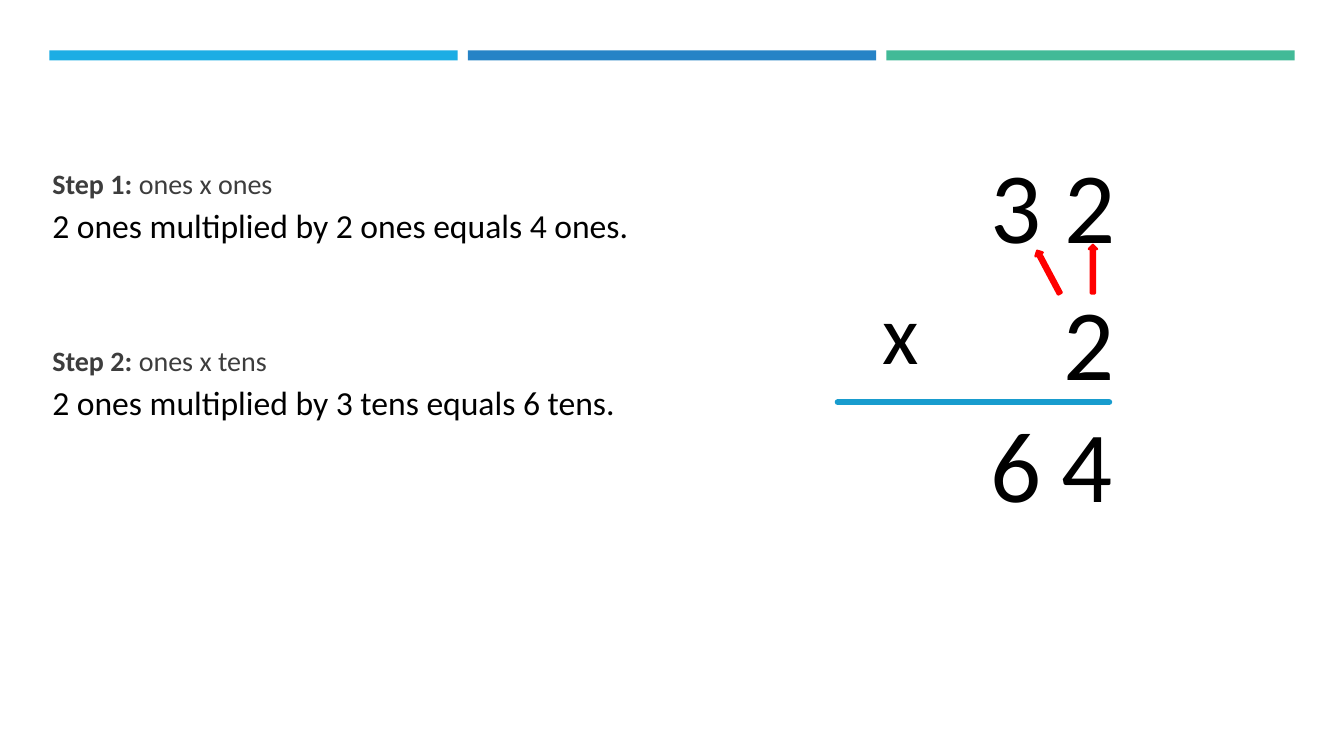
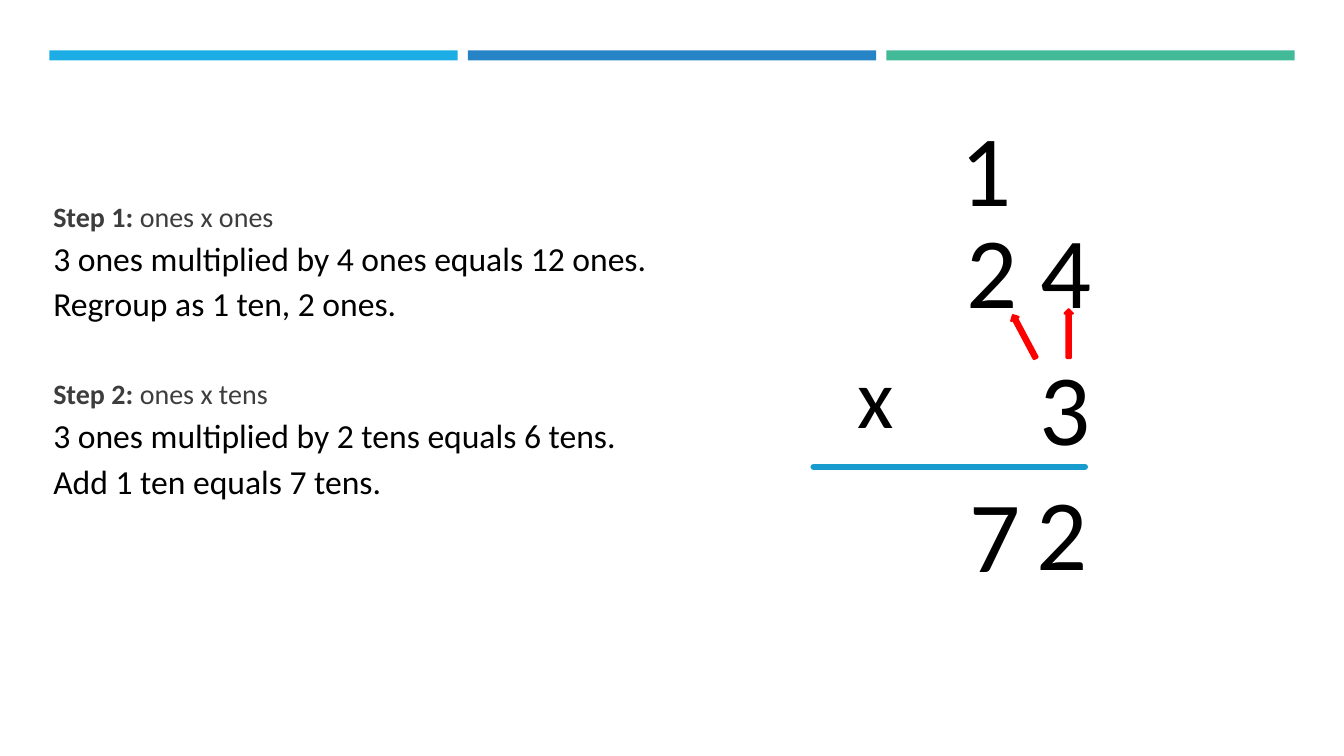
from pptx import Presentation
from pptx.dml.color import RGBColor
from pptx.enum.shapes import MSO_CONNECTOR, MSO_SHAPE
from pptx.oxml.ns import qn
from pptx.util import Inches, Pt
from lxml import etree

RECT = MSO_SHAPE.RECTANGLE
ARROW = MSO_SHAPE.RIGHT_ARROW
STRAIGHT = MSO_CONNECTOR.STRAIGHT

BLACK = RGBColor(0x00, 0x00, 0x00)
GREY = RGBColor(0x3D, 0x3D, 0x3D)
RED = RGBColor(0xFF, 0x00, 0x00)
RULE = RGBColor(0x18, 0x9C, 0xCE)
BANDS = (
    RGBColor(0x1C, 0xAD, 0xE4),
    RGBColor(0x26, 0x83, 0xC6),
    RGBColor(0x42, 0xBA, 0x97),
)

DIGIT = {"name": "Calibri", "size": Pt(72)}
TIMES = {"name": "Calibri", "size": Pt(60)}
BODY = {"name": "Calibri", "size": Pt(24)}
LABEL = {"name": "Calibri", "size": Pt(20), "bold": True}
TOPIC = {**LABEL, "bold": False}


def add_text(slide, box, runs, color=BLACK, wrap=True):
    """Add one paragraph made of (text, format) runs."""
    frame = slide.shapes.add_textbox(*map(Inches, box)).text_frame
    frame.word_wrap = wrap
    para = frame.paragraphs[0]
    para.space_after = Pt(6)
    for text, style in runs:
        run = para.add_run()
        run.text = text
        for key, value in style.items():
            setattr(run.font, key, value)
        run.font.color.rgb = color


def add_block(slide, kind, box, color):
    """Add a filled preset shape without outline or shadow."""
    block = slide.shapes.add_shape(kind, *map(Inches, box))
    block.shadow.inherit = False
    block.fill.solid()
    block.fill.fore_color.rgb = color
    block.line.fill.background()
    return block


def add_bands(slide, left, top):
    """Put the three top bands on the layout that the slides share."""
    tree = slide.slide_layout.shapes.element
    for i, color in enumerate(BANDS):
        band = add_block(slide, RECT, (left + 4.15 * i, top, 4.05, 0.1), color)
        tree.append(band.element)


def add_rule(slide, left, top, width):
    """Draw the line above the answer."""
    rule = slide.shapes.add_connector(
        STRAIGHT, *map(Inches, (left, top, left + width, top)))
    rule.line.color.rgb = RULE
    rule.line.width = Pt(4.5)
    props = rule.element.spPr
    props.find(qn("a:ln")).set("cap", "rnd")
    etree.SubElement(props, qn("a:effectLst"))


def add_arrow(slide, left, top, turn):
    """Draw a red arrow turned by the given degrees."""
    arrow = add_block(slide, ARROW, (left, top, 0.48, 0.08), RED)
    arrow.rotation = turn
    arrow.line.color.rgb = RED
    arrow.line.width = Pt(1.75)


def add_sum(slide, left, top, upper, lower, answer, spots, carry=None):
    """Set out a column multiplication from its top left corner."""
    digits = [(upper, 1.42, 0, 2.55), (lower, 2.14, 1.36, 0.73)]
    digits += [(digit, x, y, 0.87) for digit, (x, y) in zip(answer, spots)]
    if carry:
        digits.append((carry, 1.36, -1.01, 0.73))
    for text, x, y, width in digits:
        add_text(slide, (left + x, top + y, width, 1.31), [(text, DIGIT)])
    add_text(slide, (left + 0.34, top + 1.36, 0.57, 1.11),
             [("x", TIMES)], wrap=False)
    add_rule(slide, left, top + 2.62, 2.69)
    add_arrow(slide, left + 2.29, top + 1.26, 270)
    add_arrow(slide, left + 1.85, top + 1.29, 242)


def add_steps(slide, left, top, steps):
    """List the numbered steps, each a topic above its lines."""
    for i, (topic, lines) in enumerate(steps):
        y = top + 1.76 * i
        add_text(slide, (left, y, 5.95, 0.49),
                 [(f"Step {i + 1}: ", LABEL), (topic, TOPIC)], GREY)
        for j, line in enumerate(lines):
            add_text(slide, (left, y + 0.38 + 0.45 * j, 6.48, 0.58),
                     [(line, BODY)])


def main():
    """Build both slides and save them."""
    prs = Presentation()
    prs.slide_width, prs.slide_height = Inches(13.33), Inches(7.5)
    blank = prs.slide_layouts[6]

    plain = prs.slides.add_slide(blank)
    add_bands(plain, 0.49, 0.5)
    add_sum(plain, 8.31, 1.37, "3 2", "2", "64",
            ((1.42, 2.57), (2.12, 2.57)))
    add_steps(plain, 0.42, 1.6, (
        ("ones x ones", ["2 ones multiplied by 2 ones equals 4 ones."]),
        ("ones x tens", ["2 ones multiplied by 3 tens equals 6 tens."]),
    ))

    group = prs.slides.add_slide(blank)
    add_sum(group, 8.07, 2.01, "2 4", "3", "72",
            ((1.45, 2.62), (2.11, 2.6)), carry="1")
    add_steps(group, 0.43, 1.93, (
        ("ones x ones", ["3 ones multiplied by 4 ones equals 12 ones.",
                         "Regroup as 1 ten, 2 ones."]),
        ("ones x tens", ["3 ones multiplied by 2 tens equals 6 tens.",
                         "Add 1 ten equals 7 tens."]),
    ))
    prs.save("out.pptx")


if __name__ == "__main__":
    main()
